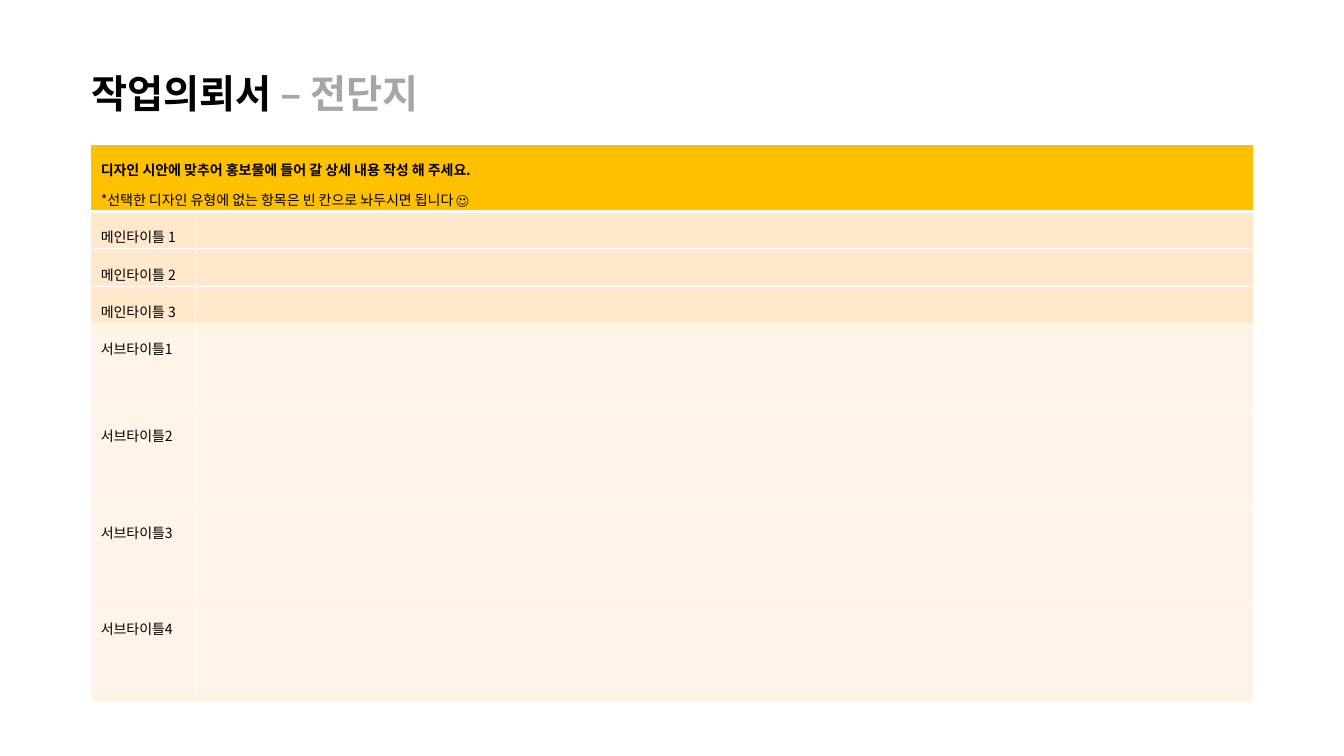
from lxml import etree
from pptx import Presentation
from pptx import util as u
from pptx.dml.color import RGBColor
from pptx.enum import text
from pptx.oxml import ns

FONT = "Noto Sans CJK KR"


def write(para, words, size, color="000000", bold=False):
    """Add a run, with the font set for Latin and Korean letters alike."""
    run = para.add_run()
    run.text = words
    font = run.font
    font.name, font.size, font.bold = FONT, u.Pt(size), bold
    font.color.rgb = RGBColor.from_string(color)
    etree.SubElement(run._r.get_or_add_rPr(), ns.qn("a:ea"), typeface=FONT)


def edge(cell, side, width):
    """Draw one white border; side is L, R, T or B."""
    line = etree.SubElement(cell._tc.get_or_add_tcPr(), ns.qn("a:ln" + side),
                            w=str(u.Pt(width)))
    fill = etree.SubElement(line, ns.qn("a:solidFill"))
    etree.SubElement(fill, ns.qn("a:srgbClr"), val="FFFFFF")


prs = Presentation()
prs.slide_width, prs.slide_height = u.Inches(13.33), u.Inches(7.5)
slide = prs.slides.add_slide(prs.slide_layouts[6])

# Title
box = slide.shapes.add_textbox(u.Inches(0.81), u.Inches(0.64),
                               u.Inches(3.82), u.Inches(0.57))
frame = box.text_frame
frame.word_wrap = False
frame.auto_size = text.MSO_AUTO_SIZE.SHAPE_TO_FIT_TEXT
title = frame.paragraphs[0]
write(title, "작업의뢰서 ", 28, bold=True)
write(title, "– 전단지", 28, "A6A6A6", True)

# Request form: (row height, fill, label lines)
rows = [(0.67, "FFC000", ["디자인 시안에 맞추어 홍보물에 들어 갈 상세 내용 작성 해 주세요.",
                          "*선택한 디자인 유형에 없는 항목은 빈 칸으로 놔두시면 됩니다 ☺"])]
rows += [(0.37, "FFE8CB", [f"메인타이틀 {n}"]) for n in (1, 2, 3)]
rows += [(high, "FFF4E7", [f"서브타이틀{n}"])
         for n, high in enumerate((0.86, 0.96, 0.96, 0.98), 1)]

table = slide.shapes.add_table(len(rows), 2, u.Inches(0.9), u.Inches(1.43),
                               u.Inches(11.53), u.Inches(5.54)).table
table.columns[0].width = u.Inches(1.04)
table.columns[1].width = u.Inches(10.49)

for r, (high, color, lines) in enumerate(rows):
    table.rows[r].height = u.Inches(high)
    for c, cell in enumerate(table.rows[r].cells):
        for side in "LRTB":
            thick = (r, side) in ((0, "B"), (1, "T"))
            edge(cell, side, 3 if thick else 1)
        cell.fill.solid()
        cell.fill.fore_color.rgb = RGBColor.from_string(color)
        cell.margin_bottom = 0
        para = cell.text_frame.paragraphs[0]
        if c == 1:
            # Small type keeps the empty answer cells from growing
            etree.SubElement(para._p, ns.qn("a:endParaRPr"), sz="1000")
            continue
        for n, line in enumerate(lines):
            if n:
                para = cell.text_frame.add_paragraph()
            para.line_spacing = 1.5
            write(para, line, 10, bold=(r == 0 and n == 0))

table.cell(0, 0).merge(table.cell(0, 1))

prs.save("out.pptx")
